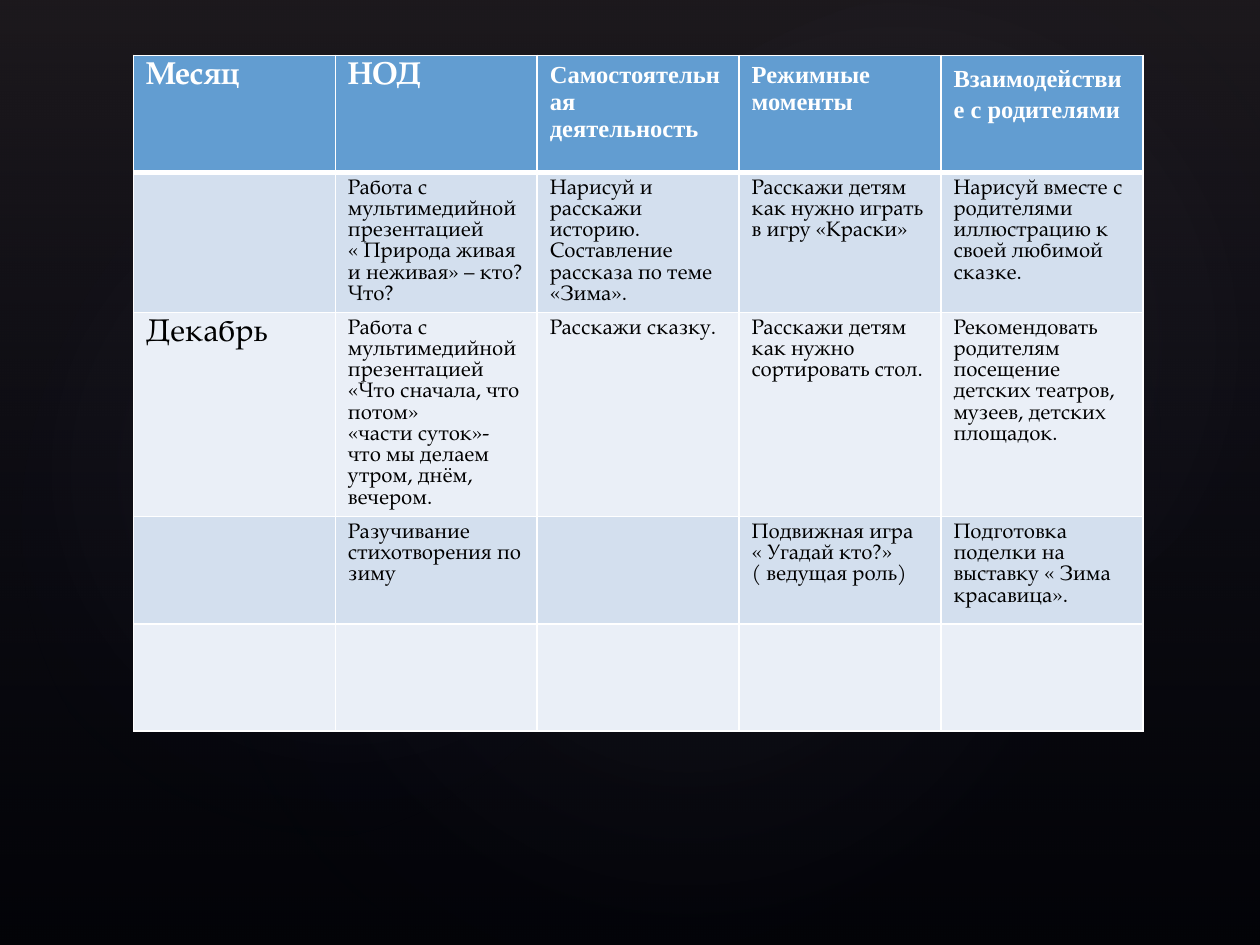
from lxml import etree
from pptx import Presentation, util as u
from pptx.dml.color import RGBColor
from pptx.enum import shapes
from pptx.oxml import parse_xml
from pptx.oxml.ns import qn

WHITE = RGBColor(0xFF, 0xFF, 0xFF)
BLACK = RGBColor(0, 0, 0)
HEAD = RGBColor(0x62, 0x9D, 0xD1)
BANDS = RGBColor(0xD3, 0xDF, 0xEE), RGBColor(0xEA, 0xEF, 0xF7)
PLUM = RGBColor(0x50, 0x46, 0x52)
NAVY = RGBColor(0x24, 0x28, 0x52)
MIST = RGBColor(0xC4, 0xBC, 0xC6)
SERIF = "TeX Gyre Pagella"
TIMES = "Times New Roman"
NS = "http://schemas.openxmlformats.org/drawingml/2006/main"


def write(frame, text, size=12, font=SERIF, color=BLACK, bold=False,
          lead=None, after=None):
    """Fill a text frame: a new line starts a paragraph, \\v breaks a line."""
    frame.text = text
    for para in frame.paragraphs:
        para.line_spacing = lead
        para.space_after = after
        for run in para.runs:
            face = run.font
            face.size, face.name, face.bold = u.Pt(size), font, bold
            face.color.rgb = color


class Deck:
    def __init__(self, wide, high):
        self.prs = Presentation()
        self.prs.slide_width, self.prs.slide_height = u.Inches(wide), u.Inches(high)
        self.slide = self.prs.slides.add_slide(self.prs.slide_layouts[6])

    def back(self, color):
        fill = self.slide.background.fill
        fill.solid()
        fill.fore_color.rgb = color

    def glow(self, kind, box, stops, turn=0, round_=False):
        """Add a see-through gradient shape; stops are (place, colour, opacity)."""
        shape = self.slide.shapes.add_shape(kind, *map(u.Inches, box))
        shape.shadow.inherit = False
        shape.rotation = turn
        shape.line.fill.background()
        marks = "".join(
            f'<a:gs pos="{pos * 1000}"><a:srgbClr val="{color}">'
            f'<a:alpha val="{alpha * 1000}"/></a:srgbClr></a:gs>'
            for pos, color, alpha in stops)
        way = ('<a:path path="circle"><a:fillToRect l="50000" t="50000" '
               'r="50000" b="50000"/></a:path>' if round_
               else '<a:lin ang="5400000" scaled="0"/>')
        grad = parse_xml(f'<a:gradFill xmlns:a="{NS}" rotWithShape="1">'
                         f'<a:gsLst>{marks}</a:gsLst>{way}</a:gradFill>')
        shape._element.spPr.find(qn("a:prstGeom")).addnext(grad)

    def edge(self, cell, base):
        """Draw white borders; the bottom one has its own width."""
        props = cell._tc.get_or_add_tcPr()
        for spot, side in enumerate("LRTB"):
            width = base if side == "B" else 1
            line = etree.Element(qn(f"a:ln{side}"), w=str(u.Pt(width)))
            fill = etree.SubElement(line, qn("a:solidFill"))
            etree.SubElement(fill, qn("a:srgbClr"), val=str(WHITE))
            props.insert(spot, line)

    def table(self, left, top, width, highs, rows):
        grid = self.slide.shapes.add_table(
            len(rows), len(rows[0]), u.Inches(left), u.Inches(top),
            u.Inches(width), u.Inches(sum(highs))).table
        for r, (high, row) in enumerate(zip(highs, rows)):
            grid.rows[r].height = u.Inches(high)
            for c, (text, form) in enumerate(row):
                cell = grid.cell(r, c)
                cell.fill.solid()
                cell.fill.fore_color.rgb = BANDS[(r - 1) % 2] if r else HEAD
                self.edge(cell, 1 if r else 3)
                if text:
                    write(cell.text_frame, text, **form)


# Table wording
TOP = dict(color=WHITE, bold=True)
BIG = dict(TOP, size=18)
MID = dict(TOP, size=14, font=TIMES)
HEADS = [
    ("Месяц", BIG), ("НОД", BIG),
    ("Самостоятельная деятельность", MID), ("Режимные моменты", MID),
    ("Взаимодействие с родителями", dict(MID, lead=1.15, after=u.Pt(4))),
]
PLANS = [
    ["",
     "Работа с мультимедийной презентацией\v« Природа живая и неживая» – кто? Что?",
     "Нарисуй и расскажи историю.\nСоставление рассказа по теме «Зима».",
     "Расскажи детям как нужно играть в игру «Краски»",
     "Нарисуй вместе с родителями иллюстрацию к своей любимой сказке."],
    ["Декабрь",
     "Работа с мультимедийной презентацией «Что сначала, что потом»\n"
     "«части суток»- что мы делаем утром, днём, вечером.",
     "Расскажи сказку.",
     "Расскажи детям как нужно сортировать стол.",
     "Рекомендовать родителям посещение детских театров, музеев, детских площадок."],
    ["", "Разучивание стихотворения по зиму", "",
     "Подвижная игра\v« Угадай кто?»\v( ведущая роль)",
     "Подготовка поделки на выставку « Зима красавица»."],
    [""] * 5,
]


def main():
    deck = Deck(10, 7.5)

    # Dark backdrop with soft glows
    deck.back(BLACK)
    deck.glow(shapes.MSO_SHAPE.RECTANGLE, (0, 0, 10, 7.5),
              [(0, PLUM, 36), (100, NAVY, 10)])
    for box, turn, alpha in [((1.5, 1.14, 7.92, 6.24), 328.7, 7),
                             ((-0.3, 1.28, 6.06, 4.9), 294.3, 8),
                             ((3.58, 0.13, 7.09, 5.2), 328.7, 8)]:
        deck.glow(shapes.MSO_SHAPE.OVAL, box,
                  [(0, MIST, alpha), (58, NAVY, 0)], turn, True)

    # Plan for the month: the first column is set larger
    body = [[(text, dict(size=12 if c else 18)) for c, text in enumerate(row)]
            for row in PLANS]
    deck.table(1.06, 0.44, 8.01, [0.93, 1.11, 1.62, 0.85, 0.85], [HEADS] + body)

    deck.prs.save("out.pptx")


if __name__ == "__main__":
    main()
